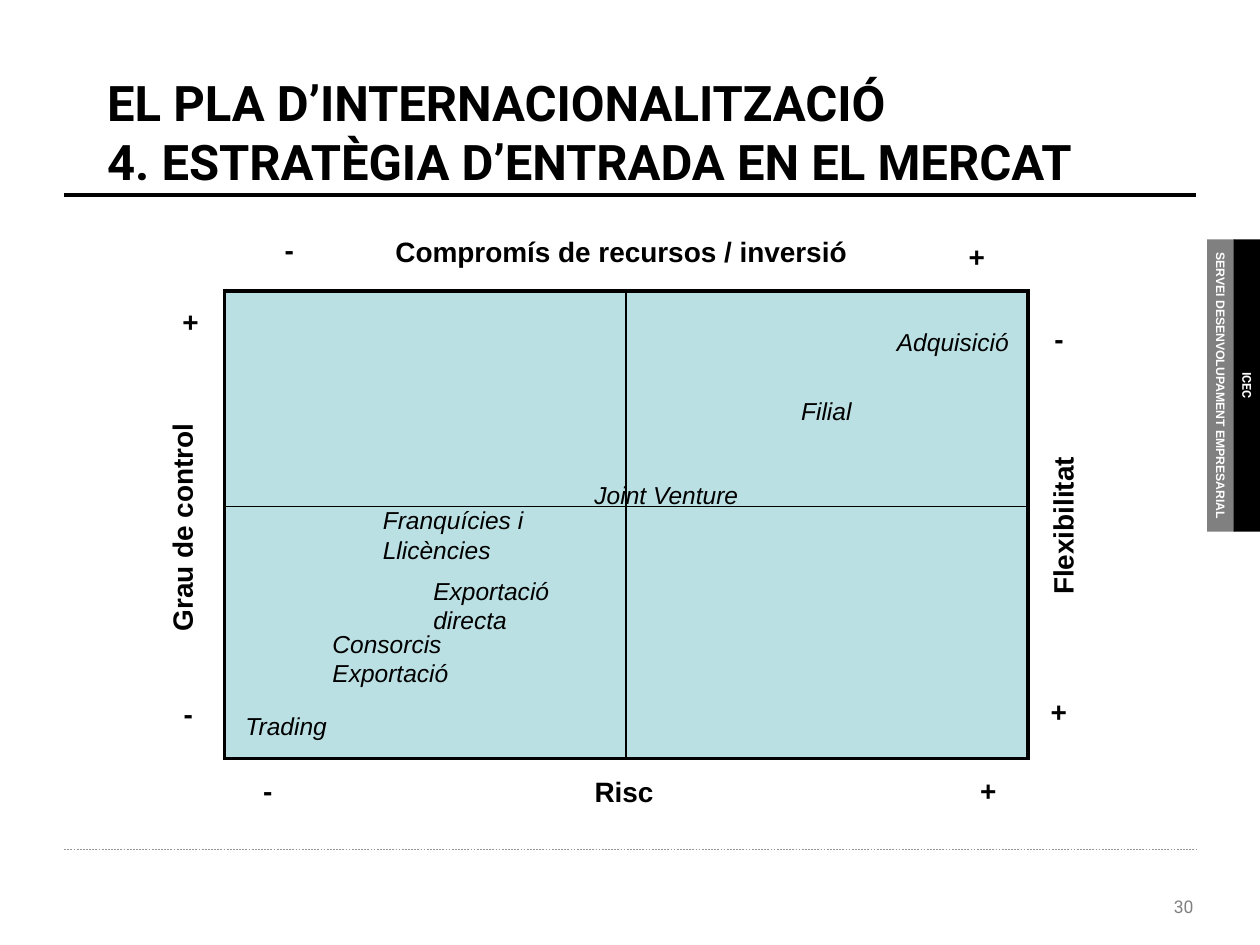
"""Draw the market entry strategy matrix."""
from dataclasses import dataclass

from lxml.etree import SubElement
from pptx import Presentation
from pptx.dml.color import RGBColor
from pptx.enum.dml import MSO_LINE
from pptx.enum.shapes import MSO_CONNECTOR, MSO_SHAPE
from pptx.enum.text import MSO_ANCHOR, MSO_AUTO_SIZE, PP_ALIGN
from pptx.oxml.ns import qn
from pptx.util import Pt

SCALE = 9144
COLORS = {"black": "000000", "white": "FFFFFF", "gray": "808080",
          "rule": "969696", "cell": "BBE0E3"}
THICK, THIN = 2.25, 1


@dataclass(frozen=True)
class Label:
    text: str
    left: int
    top: int
    width: int
    height: int = 37
    turn: int = 0


@dataclass(frozen=True)
class Tab:
    text: str
    left: int
    color: str
    font: str


@dataclass(frozen=True)
class Rule:
    top: int
    color: str
    width: float
    dash: bool = False


AXES = [
    Label("Grau de control", 51, 399, 187, turn=270),
    Label("Compromís de recursos / inversió", 304, 181, 383),
    Label("Risc", 462, 610, 68),
    Label("Flexibilitat", 778, 398, 131, turn=270),
]
SIGNS = [Label("+", x, y, 33) for x, y in
         [(135, 237), (759, 185), (768, 609), (824, 546)]]
SIGNS += [Label("-", x, y, 28) for x, y in
          [(136, 548), (216, 180), (199, 609), (827, 250)]]
MODES = [
    Label("Trading", 185, 559, 90, 34),
    Label("Consorcis\nExportació", 254, 494, 118, 57),
    Label("Franquícies i\nLlicències", 294, 396, 137, 57),
    Label("Joint Venture", 462, 376, 140, 34),
    Label("Filial", 626, 309, 65, 34),
    Label("Adquisició", 702, 255, 114, 34),
    Label("Exportació\ndirecta", 334, 452, 118, 57),
]
TABS = [Tab("SERVEI DESENVOLUPAMENT EMPRESARIAL", 853, "gray", "Arial"),
        Tab("ICEC", 874, "black", "Roboto")]
RULES = [Rule(155, "black", THICK), Rule(674, "rule", 0.25, True)]


def px(*sizes: int) -> list[int]:
    return [size * SCALE for size in sizes]


def rgb(name: str) -> RGBColor:
    return RGBColor.from_string(COLORS[name])


def style(frame, size: int, font: str = "Arial", color: str = "black",
          bold: bool = False, slant: bool = False, align=PP_ALIGN.LEFT) -> None:
    for para in frame.paragraphs:
        para.alignment = align
        for run in para.runs:
            run.font.size = Pt(size)
            run.font.name = font
            run.font.bold = bold
            run.font.italic = slant
            run.font.color.rgb = rgb(color)


def draw_label(slide, label: Label, size: int, **look) -> None:
    box = slide.shapes.add_textbox(
        *px(label.left, label.top, label.width, label.height))
    box.rotation = label.turn
    frame = box.text_frame
    frame.text = label.text
    frame.word_wrap = False
    frame.auto_size = MSO_AUTO_SIZE.SHAPE_TO_FIT_TEXT
    style(frame, size, **look)


def draw_rule(slide, rule: Rule) -> None:
    line = slide.shapes.add_connector(
        MSO_CONNECTOR.STRAIGHT, *px(51, rule.top, 949, rule.top))
    line.line.color.rgb = rgb(rule.color)
    line.line.width = Pt(rule.width)
    if rule.dash:
        line.line.dash_style = MSO_LINE.DASH
    SubElement(line._element.spPr, qn("a:effectLst"))


def draw_tab(slide, tab: Tab) -> None:
    shape = slide.shapes.add_shape(
        MSO_SHAPE.RECTANGLE, *px(tab.left, 295, 232, 22))
    shape.rotation = 90
    shape.shadow.inherit = False
    shape.fill.solid()
    shape.fill.fore_color.rgb = rgb(tab.color)
    shape.line.fill.background()
    frame = shape.text_frame
    frame.text = tab.text
    frame.word_wrap = False
    frame.margin_top = frame.margin_bottom = 0
    frame.vertical_anchor = MSO_ANCHOR.MIDDLE
    style(frame, 7, tab.font, "white", bold=True, align=PP_ALIGN.CENTER)


def draw_edge(cell, side: str, width: float) -> None:
    line = SubElement(cell._tc.get_or_add_tcPr(), qn(f"a:ln{side}"),
                      w=str(Pt(width)))
    fill = SubElement(line, qn("a:solidFill"))
    SubElement(fill, qn("a:srgbClr"), val=COLORS["black"])


def draw_grid(slide) -> None:
    table = slide.shapes.add_table(2, 2, *px(178, 231, 638, 371)).table
    table.first_row = table.horz_banding = False
    for row, high in zip(table.rows, px(171, 200)):
        row.height = high
    for r in range(2):
        for c in range(2):
            cell = table.cell(r, c)
            outer = {"L": c == 0, "R": c == 1, "T": r == 0, "B": r == 1}
            for side, edge in outer.items():
                draw_edge(cell, side, THICK if edge else THIN)
            cell.fill.solid()
            cell.fill.fore_color.rgb = rgb("cell")


def draw_title(slide) -> None:
    title = slide.shapes.title
    title.left, title.top, title.width, title.height = px(75, 42, 850, 125)
    frame = title.text_frame
    frame.text = ("EL PLA D’INTERNACIONALITZACIÓ\v"
                  "4. ESTRATÈGIA D’ENTRADA EN EL MERCAT")
    frame.auto_size = MSO_AUTO_SIZE.NONE
    frame.vertical_anchor = MSO_ANCHOR.MIDDLE
    style(frame, 28, "Roboto", bold=True)


def draw_page(slide) -> None:
    box = slide.shapes.add_textbox(*px(784, 706, 173, 27))
    frame = box.text_frame
    frame.text = "30"
    frame.word_wrap = True
    style(frame, 10, "Roboto", "gray", align=PP_ALIGN.RIGHT)


def main() -> None:
    deck = Presentation()
    deck.slide_width, deck.slide_height = px(1000, 750)
    slide = deck.slides.add_slide(deck.slide_layouts[5])
    for rule in RULES:
        draw_rule(slide, rule)
    draw_page(slide)
    for tab in TABS:
        draw_tab(slide, tab)
    draw_title(slide)
    draw_grid(slide)
    for label in AXES + SIGNS:
        draw_label(slide, label, 16, bold=True)
    for label in MODES:
        draw_label(slide, label, 14, slant=True)
    deck.save("out.pptx")


if __name__ == "__main__":
    main()
